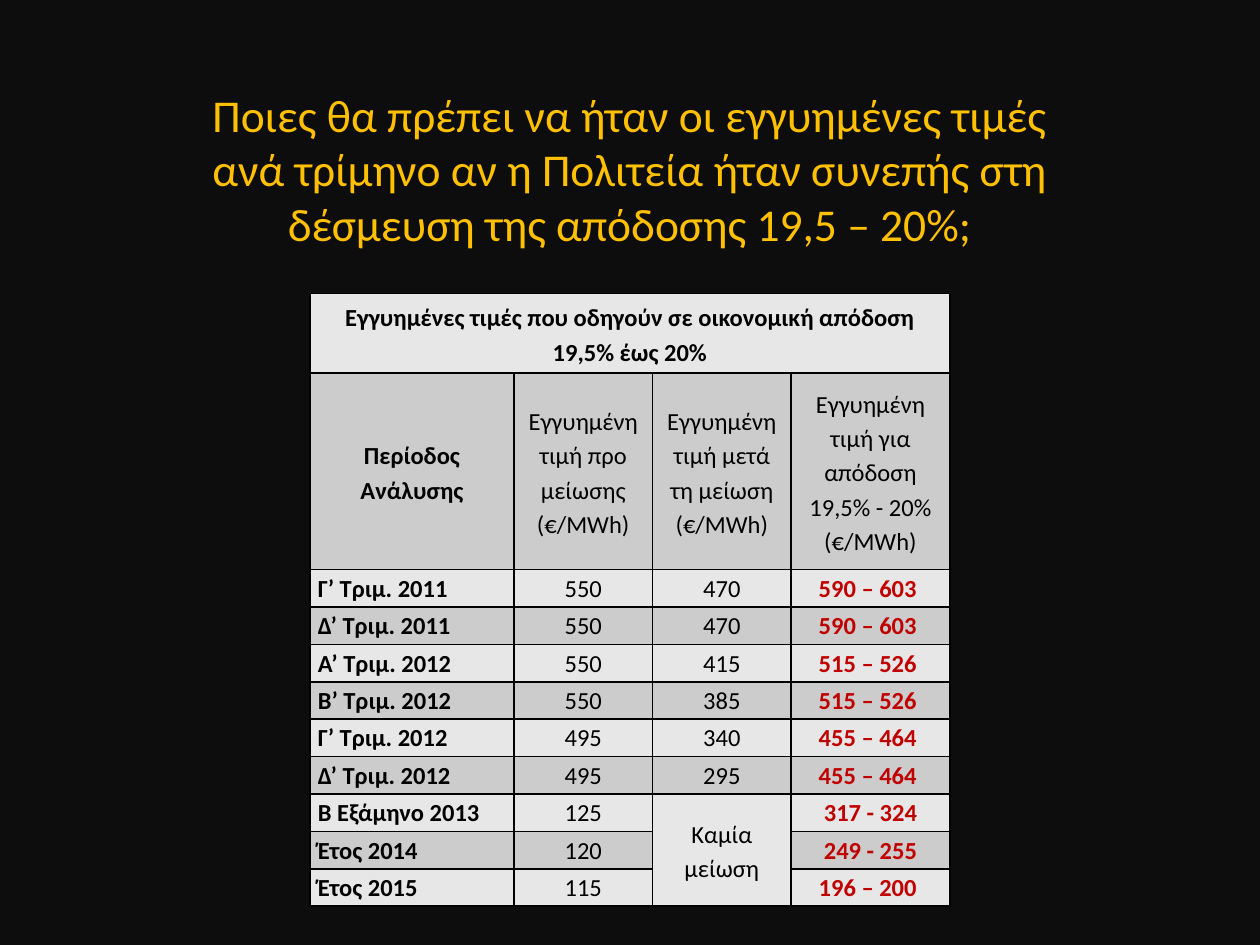
from lxml import etree
from pptx import Presentation
from pptx.dml.color import RGBColor
from pptx.enum import text as enum
from pptx.oxml import ns
from pptx.util import Pt

FONT = "Calibri"
COLORS = {
    "back": "0D0D0D",
    "title": "FFC000",
    "ink": "000000",
    "price": "C00000",
    "light": "E7E7E7",
    "dark": "CCCCCC",
}
TITLE = (
    "Ποιες θα πρέπει να ήταν οι εγγυημένες τιμές ανά τρίμηνο αν η Πολιτεία "
    "ήταν συνεπής στη δέσμευση της απόδοσης 19,5 – 20%;"
)
ROWS = [
    ["Εγγυημένες τιμές που οδηγούν σε οικονομική απόδοση 19,5% έως 20%", "", "", ""],
    [
        "Περίοδος Ανάλυσης",
        "Εγγυημένη τιμή προ μείωσης (€/MWh)",
        "Εγγυημένη τιμή μετά τη μείωση (€/MWh)",
        "Εγγυημένη τιμή για απόδοση 19,5% - 20% (€/MWh)",
    ],
    ["Γ’ Τριμ. 2011", "550", "470", "590 – 603 "],
    ["Δ’ Τριμ. 2011", "550", "470", "590 – 603 "],
    ["Α’ Τριμ. 2012", "550", "415", "515 – 526 "],
    ["Β’ Τριμ. 2012", "550", "385", "515 – 526 "],
    ["Γ’ Τριμ. 2012", "495", "340", "455 – 464 "],
    ["Δ’ Τριμ. 2012", "495", "295", "455 – 464 "],
    ["Β Εξάμηνο 2013", "125", "Καμία μείωση", "317 - 324"],
    ["Έτος 2014", "120", "", "249 - 255"],
    ["Έτος 2015", "115", "", "196 – 200 "],
]
HEAD = 2  # rows above the data
MERGED = 8  # first row of the merged "no cut" cell
WIDTHS = [116.6, 79.2, 79.2, 90.7]
HEIGHTS = [45.4, 112.3] + [21.4] * (len(ROWS) - HEAD)


def color(name):
    return RGBColor.from_string(COLORS[name])


def style(par, size, name, bold=False, align=enum.PP_ALIGN.CENTER):
    par.alignment = align
    for run in par.runs:
        font = run.font
        font.name, font.size, font.bold = FONT, Pt(size), bold
        font.color.rgb = color(name)


def add_edges(cell):
    """Draw a thin line on all four sides of a cell."""
    props = cell._tc.get_or_add_tcPr()
    for side in ("lnL", "lnR", "lnT", "lnB"):
        line = etree.SubElement(props, ns.qn(f"a:{side}"), w=str(Pt(1)))
        fill = etree.SubElement(line, ns.qn("a:solidFill"))
        etree.SubElement(fill, ns.qn("a:srgbClr"), val=COLORS["ink"])


def fill_cell(cell, words, row, col):
    add_edges(cell)
    cell.fill.solid()
    cell.fill.fore_color.rgb = color("dark" if row % 2 else "light")
    cell.margin_left = cell.margin_right = Pt(4.5)
    cell.margin_top = cell.margin_bottom = 0
    data = row >= HEAD
    middle = not data or (row, col) == (MERGED, 2)
    cell.vertical_anchor = enum.MSO_ANCHOR.MIDDLE if middle else enum.MSO_ANCHOR.TOP
    cell.text_frame.text = words
    par = cell.text_frame.paragraphs[0]
    par.line_spacing = 1.15
    price = data and col == 3
    style(
        par,
        14,
        "price" if price else "ink",
        bold=col == 0 or price,
        align=enum.PP_ALIGN.JUSTIFY if data and col == 0 else enum.PP_ALIGN.CENTER,
    )


def add_prices(slide):
    frame = slide.shapes.add_table(
        len(ROWS), len(WIDTHS), Pt(177.1), Pt(167.8), Pt(sum(WIDTHS)), Pt(sum(HEIGHTS))
    )
    table = frame.table
    for col, width in zip(table.columns, WIDTHS):
        col.width = Pt(width)
    for row, height in zip(table.rows, HEIGHTS):
        row.height = Pt(height)
    for r, words in enumerate(ROWS):
        for c, word in enumerate(words):
            fill_cell(table.cell(r, c), word, r, c)
    table.cell(0, 0).merge(table.cell(0, 3))
    table.cell(MERGED, 2).merge(table.cell(len(ROWS) - 1, 2))


def add_title(slide):
    box = slide.shapes.add_textbox(Pt(95.8), Pt(46.1), Pt(528.5), Pt(101.5))
    frame = box.text_frame
    frame.word_wrap = True
    frame.auto_size = enum.MSO_AUTO_SIZE.SHAPE_TO_FIT_TEXT
    frame.text = TITLE
    style(frame.paragraphs[0], 26, "title")


def main():
    deck = Presentation()
    deck.slide_width, deck.slide_height = Pt(720), Pt(540)
    slide = deck.slides.add_slide(deck.slide_layouts[6])
    slide.background.fill.solid()
    slide.background.fill.fore_color.rgb = color("back")
    add_prices(slide)
    add_title(slide)
    deck.save("out.pptx")


if __name__ == "__main__":
    main()
